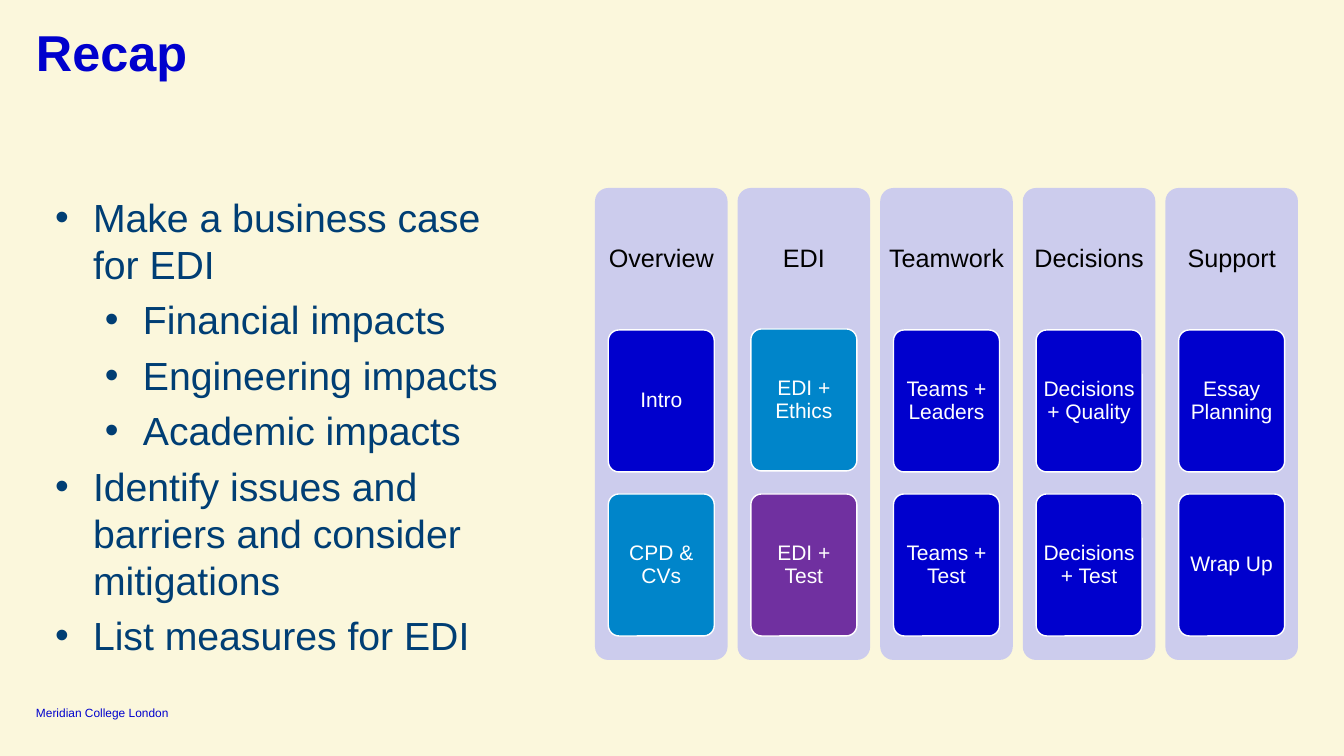
from lxml.etree import SubElement
from pptx import Presentation
from pptx.dml.color import RGBColor
from pptx.enum.shapes import MSO_SHAPE as Shape
from pptx.enum.text import MSO_ANCHOR as Anchor, PP_ALIGN as Align
from pptx.oxml.ns import qn
from pptx.util import Emu, Pt

EMU_PER_PX = 914400 / 100.8
FONT = "Arial"
COLORS = {
    "cream": "FBF7DC", "navy": "003E74", "blue": "0000CD", "sky": "0085CA",
    "purple": "7030A0", "lilac": "CCCCED", "white": "FFFFFF", "black": "000000",
}

# Bullet text and its level
GOALS = [
    ("Make a business case for EDI", 0),
    ("Financial impacts", 1),
    ("Engineering impacts", 1),
    ("Academic impacts", 1),
    ("Identify issues and barriers and consider mitigations", 0),
    ("List measures for EDI", 0),
]

# Column heading, then its sessions: label, colour, top
UPPER, LOWER = 330, 494
TOPICS = [
    ("Overview", [("Intro", "blue", UPPER), ("CPD & CVs", "sky", LOWER)]),
    ("EDI", [("EDI + Ethics", "sky", UPPER - 1), ("EDI + Test", "purple", LOWER)]),
    ("Teamwork", [("Teams + Leaders", "blue", UPPER), ("Teams + Test", "blue", LOWER)]),
    ("Decisions", [("Decisions + Quality", "blue", UPPER), ("Decisions + Test", "blue", LOWER)]),
    ("Support", [("Essay Planning", "blue", UPPER), ("Wrap Up", "blue", LOWER)]),
]
GRID_LEFT, GRID_TOP, GRID_WIDTH, GRID_HEIGHT = 595, 188, 703, 472
COLUMN_GAP, BLOCK_HEIGHT, CARD_WIDTH = 10, 142, 106


def px(length):
    return Emu(round(length * EMU_PER_PX))


def color(name):
    return RGBColor.from_string(COLORS[name])


def set_frame(frame, inset_x, inset_y, anchor):
    frame.word_wrap = True
    frame.margin_left = frame.margin_right = px(inset_x)
    frame.margin_top = frame.margin_bottom = px(inset_y)
    frame.vertical_anchor = anchor


def style(paragraph, size, ink, bold=False, align=Align.LEFT, spacing=1.0):
    paragraph.alignment = align
    paragraph.line_spacing = spacing
    for run in paragraph.runs:
        run.font.name = FONT
        run.font.size = Pt(size)
        run.font.bold = bold
        run.font.color.rgb = color(ink)


def add_label(slide, box, text, size, ink, inset=0, anchor=Anchor.TOP, **look):
    label = slide.shapes.add_textbox(*map(px, box)).text_frame
    set_frame(label, inset, inset, anchor)
    label.text = text
    style(label.paragraphs[0], size, ink, **look)


def add_panel(slide, box, fill, outline=None):
    panel = slide.shapes.add_shape(Shape.ROUNDED_RECTANGLE, *map(px, box))
    panel.adjustments[0] = 0.1
    panel.shadow.inherit = False
    panel.fill.solid()
    panel.fill.fore_color.rgb = color(fill)
    if outline:
        panel.line.color.rgb = color(outline)
        panel.line.width = Pt(1)
    else:
        panel.line.fill.background()
    return panel


def add_card(slide, box, text, fill):
    label = add_panel(slide, box, fill, "white").text_frame
    set_frame(label, 3, 3, Anchor.MIDDLE)
    label.text = text
    style(label.paragraphs[0], 15, "white", align=Align.CENTER, spacing=0.9)


def add_goals(slide, box, goals):
    frame = slide.shapes.add_textbox(*map(px, box)).text_frame
    set_frame(frame, 10, 5, Anchor.TOP)
    for index, (text, level) in enumerate(goals):
        goal = frame.add_paragraph() if index else frame.paragraphs[0]
        goal.text = text
        goal.level = level
        style(goal, 28, "navy")
        goal.space_after = Pt(6)
        # Hanging bullet
        properties = goal._p.get_or_add_pPr()
        properties.set("marL", str(px(38 + 50 * level)))
        properties.set("indent", str(-px(38)))
        SubElement(properties, qn("a:buFont")).set("typeface", FONT)
        SubElement(properties, qn("a:buChar")).set("char", "•")


def add_topics(slide, topics):
    pitch = (GRID_WIDTH + COLUMN_GAP) / len(topics)
    width = pitch - COLUMN_GAP
    for index, (heading, sessions) in enumerate(topics):
        left = GRID_LEFT + index * pitch
        add_panel(slide, (left, GRID_TOP, width, GRID_HEIGHT), "lilac")
        add_label(slide, (left, GRID_TOP, width, BLOCK_HEIGHT), heading, 18, "black",
                  inset=7, anchor=Anchor.MIDDLE, align=Align.CENTER, spacing=0.9)
        card_left = left + (width - CARD_WIDTH) / 2
        for session, fill, top in sessions:
            add_card(slide, (card_left, top, CARD_WIDTH, BLOCK_HEIGHT), session, fill)


def main():
    deck = Presentation()
    deck.slide_width, deck.slide_height = px(1344), px(756)
    slide = deck.slides.add_slide(deck.slide_layouts[6])
    slide.background.fill.solid()
    slide.background.fill.fore_color.rgb = color("cream")

    # Footer and title
    add_label(slide, (36, 705, 156, 15), "Meridian College London", 8.5, "blue",
              anchor=Anchor.BOTTOM)
    add_label(slide, (36, 28, 1272, 41), "Recap", 36, "blue", bold=True, spacing=0.9)

    # Goals on the left, course topics on the right
    add_goals(slide, (45, 188, 473, 480), GOALS)
    add_topics(slide, TOPICS)

    deck.save("out.pptx")


if __name__ == "__main__":
    main()
